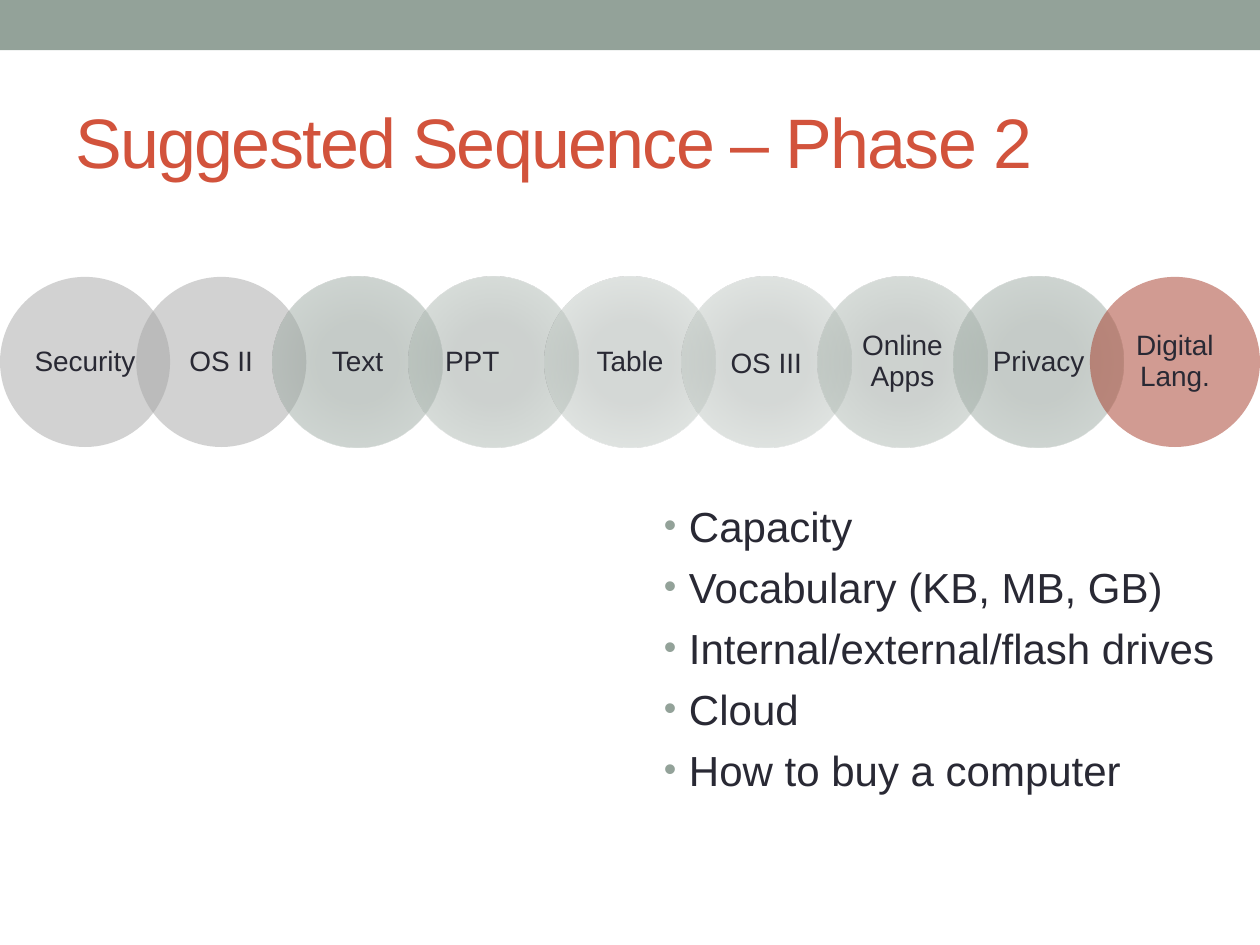
from lxml.etree import SubElement
from pptx import Presentation
from pptx.dml.color import RGBColor
from pptx.enum.shapes import MSO_SHAPE
from pptx.enum.text import MSO_ANCHOR, PP_ALIGN
from pptx.oxml.ns import qn
from pptx.util import Inches, Pt

SAGE, RUST, INK = "93A299", "D2533C", "292934"
GREY, RED = ["A6A6A6"], ["A53926"]
DARK = ["8E9A93", "8E9A93", "9EABA4", "A8B2AC"]
MID = ["9DA7A1", "9DA6A1", "AFBAB3", "B9C1BC"]
LIGHT = ["ACB4AF", "ACB3AF", "C0C8C3", "CAD0CD"]
STOPS = [0, 34, 70, 100]

STEPS = [
    ("Security", GREY, 0, 0, 0.9),
    ("OS II", GREY, 0, 0, 0.9),
    ("Text", DARK, 0.07, 0.07, 0.9),
    ("PPT", MID, 0.07, 0.41, 0.9),
    ("Table", LIGHT, 0.1, 0.1, 0.9),
    ("OS III", LIGHT, 0, 0, 1),
    ("Online Apps", MID, 0.07, 0.07, 0.9),
    ("Privacy", DARK, 0.07, 0.07, 0.9),
    ("Digital Lang.", RED, 0.07, 0.07, 0.9),
]
TOPICS = [
    "Capacity",
    "Vocabulary (KB, MB, GB)",
    "Internal/external/flash drives",
    "Cloud",
    "How to buy a computer",
]


def rgb(value):
    return RGBColor.from_string(value)


def add_xml(parent, tag, **attrs):
    return SubElement(parent, qn(tag), {k: str(v) for k, v in attrs.items()})


class Deck:
    font = "Arial"
    width, height = 10, 7.5

    def __init__(self):
        self.prs = Presentation()
        self.prs.slide_width = Inches(self.width)
        self.prs.slide_height = Inches(self.height)
        self.s = self.prs.slides.add_slide(self.prs.slide_layouts[5])

    def box(self, x, y, w, h):
        return [Inches(self.width * x), Inches(self.height * y),
                Inches(self.width * w), Inches(self.height * h)]

    def style(self, p, size, color):
        for r in p.runs:
            r.font.name = self.font
            r.font.size = Pt(size)
            r.font.color.rgb = rgb(color)

    def shape(self, kind, box, color):
        sp = self.s.shapes.add_shape(kind, *box)
        sp.shadow.inherit = False
        sp.line.fill.background()
        sp.fill.solid()
        sp.fill.fore_color.rgb = rgb(color)
        return sp

    def title(self, text, box):
        sp = self.s.shapes.title
        sp.left, sp.top, sp.width, sp.height = box
        tf = sp.text_frame
        tf.text = text
        tf.vertical_anchor = MSO_ANCHOR.MIDDLE
        p = tf.paragraphs[0]
        p.alignment = PP_ALIGN.LEFT
        self.style(p, 40, RUST)
        p.runs[0].font._element.set("spc", "-100")

    def fade(self, sp, colors):
        if len(colors) == 1:
            clr = sp._element.spPr.find(qn("a:solidFill"))[0]
            add_xml(clr, "a:alpha", val=50000)
            return
        sp.fill.gradient()
        grad = sp._element.spPr.find(qn("a:gradFill"))
        grad.clear()
        stops = add_xml(grad, "a:gsLst")
        for pos, color in zip(STOPS, colors):
            stop = add_xml(stops, "a:gs", pos=pos * 1000)
            clr = add_xml(stop, "a:srgbClr", val=color)
            add_xml(clr, "a:alpha", val=50000)
        radial = add_xml(grad, "a:path", path="circle")
        add_xml(radial, "a:fillToRect", l=100000, t=100000, r=100000, b=100000)

    def circle(self, box, text, colors, left, right, spacing):
        sp = self.shape(MSO_SHAPE.OVAL, box, colors[0])
        self.fade(sp, colors)
        tf = sp.text_frame
        tf.word_wrap = True
        tf.vertical_anchor = MSO_ANCHOR.MIDDLE
        tf.margin_left, tf.margin_right = Inches(left), Inches(right)
        tf.margin_top = tf.margin_bottom = Inches(0.02)
        tf.text = text
        p = tf.paragraphs[0]
        p.alignment = PP_ALIGN.CENTER
        p.line_spacing = spacing
        self.style(p, 16, INK)

    def chain(self, steps, top, diameter):
        pitch = (1 - diameter) / (len(steps) - 1)
        tall = diameter * self.width / self.height
        for i, step in enumerate(steps):
            self.circle(self.box(i * pitch, top, diameter, tall), *step)

    def bullets(self, items, box):
        tf = self.s.shapes.add_textbox(*box).text_frame
        tf.word_wrap = True
        tf.text = "\n".join(items)
        for p in tf.paragraphs:
            p.space_before = Pt(6)
            self.style(p, 24, INK)
            pPr = p._p.get_or_add_pPr()
            pPr.set("marL", str(Inches(0.2)))
            pPr.set("indent", str(-Inches(0.2)))
            add_xml(add_xml(pPr, "a:buClr"), "a:srgbClr", val=SAGE)
            add_xml(pPr, "a:buSzPct", val=85000)
            add_xml(pPr, "a:buFont", typeface=self.font)
            add_xml(pPr, "a:buChar", char="•")


def main():
    deck = Deck()
    deck.shape(MSO_SHAPE.RECTANGLE, deck.box(0, 0, 1, 0.053), SAGE)
    deck.title("Suggested Sequence – Phase 2", deck.box(0.05, 0.077, 0.9, 0.144))
    deck.chain(STEPS, 0.293, 0.135)
    deck.bullets(TOPICS, deck.box(0.517, 0.523, 0.483, 0.3))
    deck.prs.save("out.pptx")


if __name__ == "__main__":
    main()
